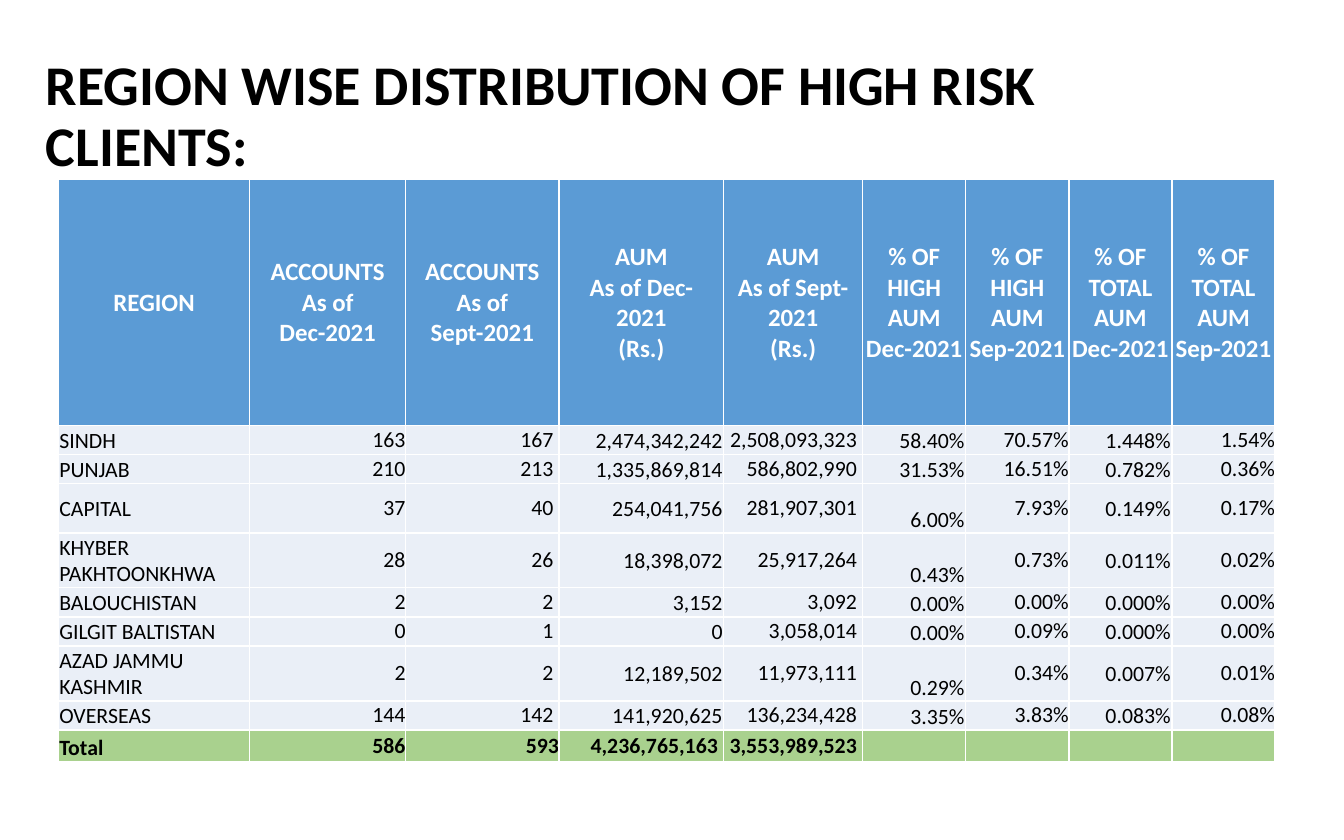
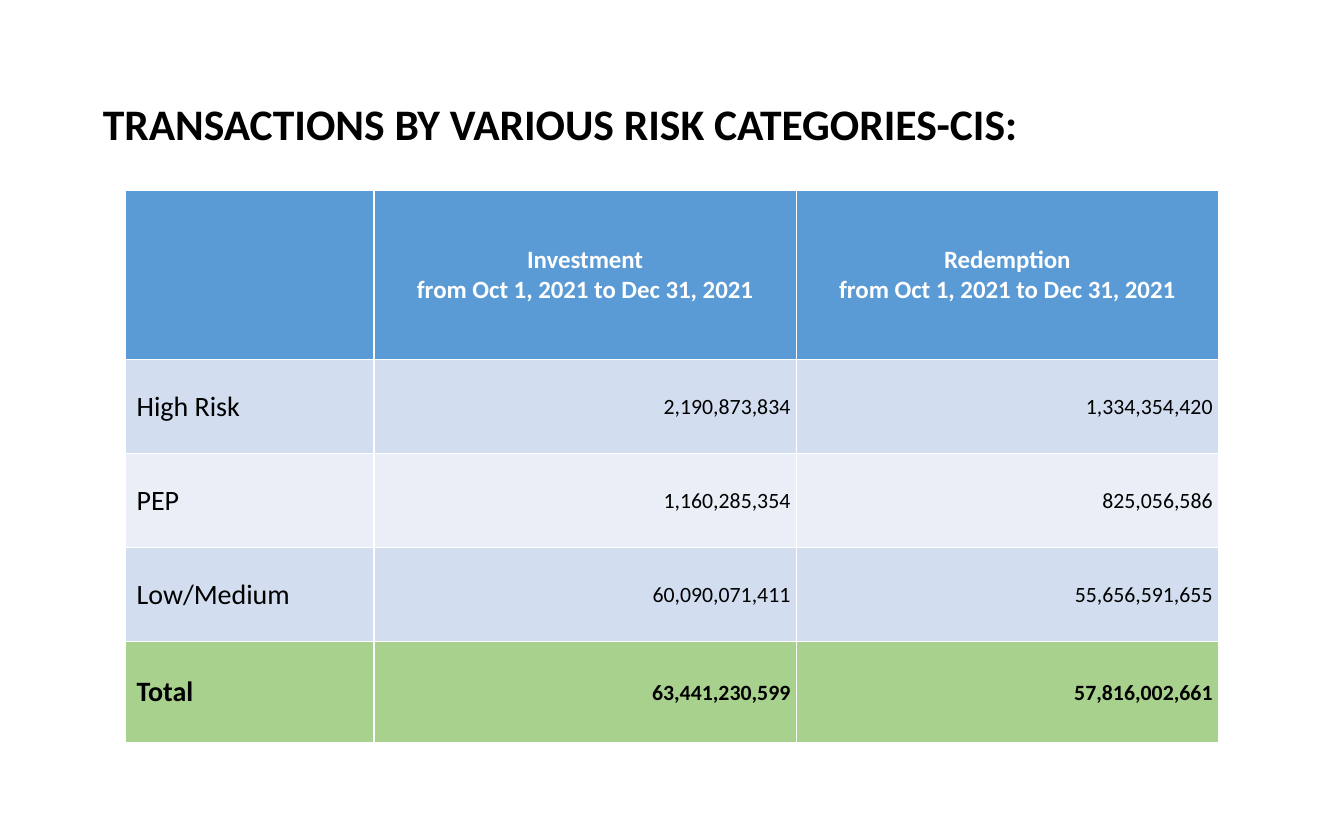
from dataclasses import dataclass

from pptx import Presentation
from pptx.dml.color import RGBColor
from pptx.enum.text import MSO_ANCHOR, PP_ALIGN
from pptx.util import Inches, Pt


@dataclass(frozen=True)
class Theme:
    font: str = "Calibri"
    black: str = "000000"
    white: str = "FFFFFF"
    header: str = "5B9BD5"
    band: str = "D2DEEF"
    pale: str = "EAEFF7"
    total: str = "A9D18E"
    header_size: int = 16
    label_size: int = 18
    body_size: int = 14


theme = Theme()
deck = Presentation()
deck.slide_width, deck.slide_height = Inches(12), Inches(7.5)
x_percent, y_percent = deck.slide_width / 100, deck.slide_height / 100
blank_layout = deck.slide_layouts[6]

TIGHT = (0.01, 0.01, 0.01, 0)
FLUSH = (0, 0, 0, 0)
PADDED = (0, 0, 0.05, 0)
TIGHT_PADDED = (0.01, 0.01, 0.05, 0)
ROOMY = (0.1, 0.05, 0.1, 0.05)


def write(holder, text, size=theme.body_size, color=theme.black, bold=False,
          align=PP_ALIGN.LEFT, anchor=MSO_ANCHOR.MIDDLE, inset=ROOMY, spacing=1.0):
    """Fill a table cell or a text frame, one paragraph per line of text."""
    holder.vertical_anchor = anchor
    (holder.margin_left, holder.margin_top,
     holder.margin_right, holder.margin_bottom) = map(Inches, inset)
    frame = getattr(holder, "text_frame", holder)
    frame.word_wrap = True
    for index, line in enumerate(text.split("\n")):
        para = frame.add_paragraph() if index else frame.paragraphs[0]
        para.alignment = align
        para.line_spacing = spacing
        if not line:
            para._p.get_or_add_endParaRPr().set("sz", str(size * 100))
            continue
        span = para.add_run()
        span.text = line
        span.font.name = theme.font
        span.font.size = Pt(size)
        span.font.bold = bold
        span.font.color.rgb = RGBColor.from_string(color)


def add_titled_table(title, title_size, title_at, table_at, columns, rows, fills):
    """Add a page; places are percentages of the slide, columns and rows are weights."""
    page = deck.slides.add_slide(blank_layout)
    left, top = title_at
    box = page.shapes.add_textbox(int(left * x_percent), int(top * y_percent),
                                  int(86.25 * x_percent), int(19.33 * y_percent))
    write(box.text_frame, title, size=title_size, bold=True, spacing=0.9)

    left, top, width, height = table_at
    width, height = width * x_percent, height * y_percent
    table = page.shapes.add_table(len(rows), len(columns), int(left * x_percent),
                                  int(top * y_percent), int(width), int(height)).table
    table.horz_banding = False
    for column, weight in zip(table.columns, columns):
        column.width = int(width * weight / sum(columns))
    for row, weight, fill in zip(table.rows, rows, fills):
        row.height = int(height * weight / sum(rows))
        for cell in row.cells:
            cell.fill.solid()
            cell.fill.fore_color.rgb = RGBColor.from_string(fill)
    return table


# Slide 1: high risk clients by region
region_headers = [
    "REGION", "ACCOUNTS\nAs of\nDec-2021", "ACCOUNTS\nAs of\nSept-2021",
    "AUM\nAs of Dec-\n2021\n(Rs.)", "AUM\nAs of Sept-\n2021\n(Rs.)",
    "% OF HIGH AUM\nDec-2021", "% OF HIGH AUM\nSep-2021",
    "% OF TOTAL AUM\nDec-2021", "% OF TOTAL AUM\nSep-2021",
]
regions = [
    ["SINDH", "163", "167", "2,474,342,242", "2,508,093,323", "58.40%", "70.57%", "1.448%", "1.54%"],
    ["PUNJAB", "210", "213", "1,335,869,814", "586,802,990", "31.53%", "16.51%", "0.782%", "0.36%"],
    ["CAPITAL", "37", "40", "254,041,756", "281,907,301", "6.00%", "7.93%", "0.149%", "0.17%"],
    ["KHYBER PAKHTOONKHWA", "28", "26", "18,398,072", "25,917,264", "0.43%", "0.73%", "0.011%", "0.02%"],
    ["BALOUCHISTAN", "2", "2", "3,152", "3,092", "0.00%", "0.00%", "0.000%", "0.00%"],
    ["GILGIT BALTISTAN", "0", "1", "0", "3,058,014", "0.00%", "0.09%", "0.000%", "0.00%"],
    ["AZAD JAMMU KASHMIR", "2", "2", "12,189,502", "11,973,111", "0.29%", "0.34%", "0.007%", "0.01%"],
    ["OVERSEAS", "144", "142", "141,920,625", "136,234,428", "3.35%", "3.83%", "0.083%", "0.08%"],
    ["Total", "586", "593", "4,236,765,163", "3,553,989,523", "", "", "", ""],
]
region_insets = [TIGHT, FLUSH, PADDED, TIGHT, PADDED, TIGHT, FLUSH, TIGHT, FLUSH]
total_insets = [TIGHT, FLUSH, FLUSH, TIGHT_PADDED, PADDED] + [TIGHT] * 4

table = add_titled_table(
    "REGION WISE DISTRIBUTION OF HIGH RISK CLIENTS:", 36, (2.6, 4.4),
    (4.33, 21.33, 90.55, 69.33),
    columns=[1.71, 1.39, 1.37, 1.47, 1.24] + [0.92] * 4,
    rows=[2.2, 0.26, 0.26, 0.44, 0.49, 0.26, 0.26, 0.49, 0.26, 0.28],
    fills=[theme.header] + [theme.pale] * 8 + [theme.total])
table.first_row = False

for column, header in enumerate(region_headers):
    write(table.cell(0, column), header, size=theme.header_size, color=theme.white,
          bold=True, align=PP_ALIGN.CENTER, inset=TIGHT)
for row, values in enumerate(regions, start=1):
    is_total = values[0] == "Total"
    insets = total_insets if is_total else region_insets
    low_column = 0 if is_total else 5
    for column, value in enumerate(values):
        write(table.cell(row, column), value, bold=is_total, inset=insets[column],
              align=PP_ALIGN.RIGHT if column else PP_ALIGN.LEFT,
              anchor=MSO_ANCHOR.BOTTOM if column == low_column else MSO_ANCHOR.MIDDLE)

# Slide 2: transactions by risk category
period = "from Oct 1, 2021 to Dec 31, 2021"
transactions = [
    ["High Risk", "2,190,873,834", "1,334,354,420"],
    ["PEP", "1,160,285,354", "825,056,586"],
    ["Low/Medium", "60,090,071,411", "55,656,591,655"],
    ["Total", "63,441,230,599", "57,816,002,661"],
]

table = add_titled_table(
    "TRANSACTIONS BY VARIOUS RISK CATEGORIES-CIS:", 28, (6.83, 5.33),
    (9.33, 22.67, 81.33, 65.73),
    columns=[2.22, 3.77, 3.77], rows=[1.51, 0.84, 0.84, 0.84, 0.9],
    fills=[theme.header, theme.band, theme.pale, theme.band, theme.total])

for column, header in enumerate(["", f"Investment\n{period}", f"Redemption\n{period}"]):
    write(table.cell(0, column), header, size=theme.header_size, color=theme.white,
          bold=True, align=PP_ALIGN.CENTER)
for row, (category, *amounts) in enumerate(transactions, start=1):
    is_total = category == "Total"
    write(table.cell(row, 0), category, size=theme.label_size, bold=is_total)
    for column, amount in enumerate(amounts, start=1):
        write(table.cell(row, column), amount, bold=is_total,
              align=PP_ALIGN.RIGHT, inset=TIGHT_PADDED)

deck.save("out.pptx")
